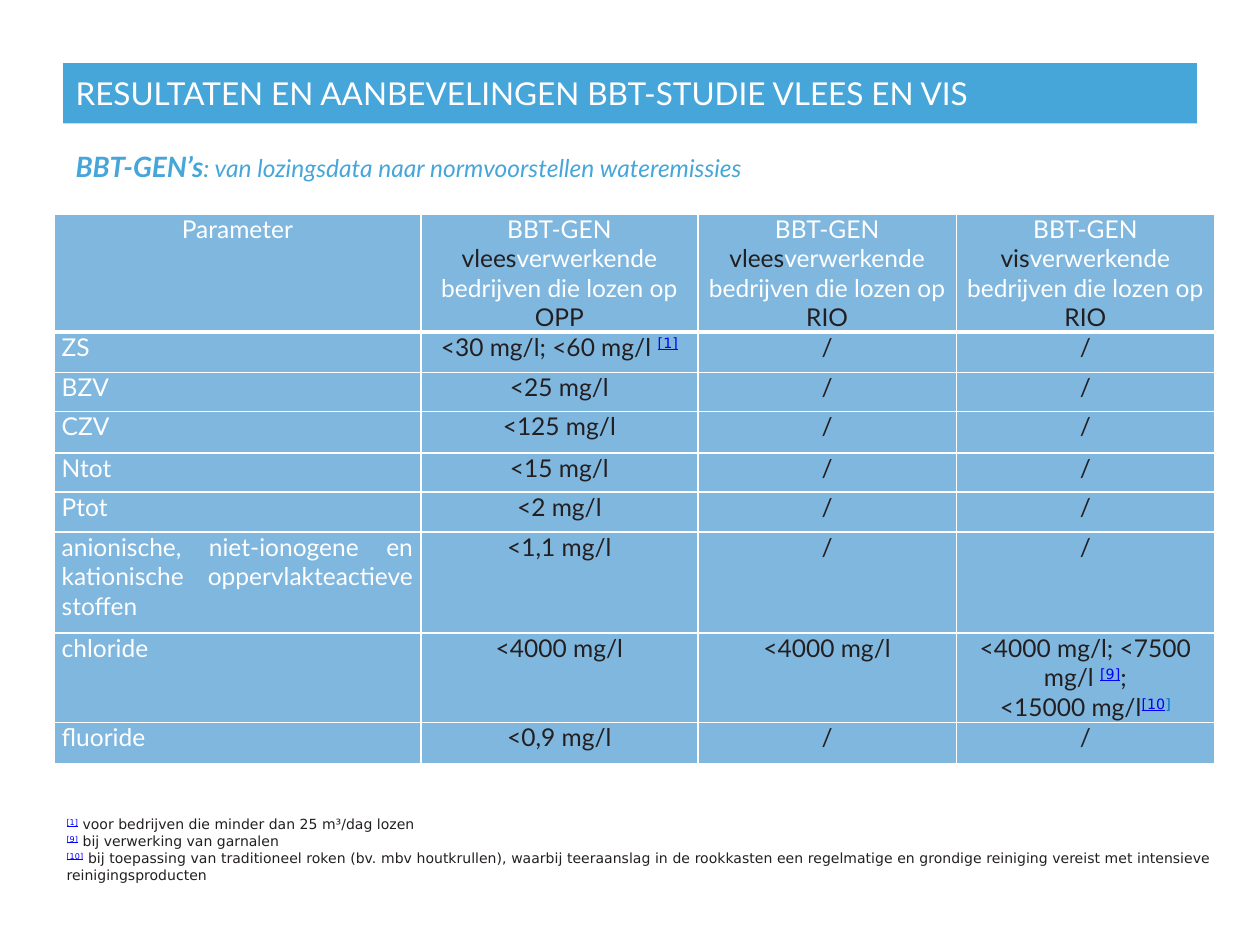
from dataclasses import dataclass
from typing import Any

from lxml.etree import SubElement
from pptx import Presentation
from pptx.dml.color import RGBColor
from pptx.enum.shapes import MSO_SHAPE
from pptx.enum.text import MSO_ANCHOR, MSO_AUTO_SIZE, PP_ALIGN
from pptx.oxml import parse_xml
from pptx.oxml.ns import nsdecls, qn
from pptx.util import Emu, Inches, Pt

WHITE, INK, BLUE, LINK, CELL = "FFFFFF", "231F20", "47A6D9", "0000FF", "0070C0"
LATO, DEJAVU = "Lato", "DejaVu Sans"
LEFT, CENTER, JUSTIFY = PP_ALIGN.LEFT, PP_ALIGN.CENTER, PP_ALIGN.JUSTIFY


@dataclass(frozen=True)
class Box:
    left: float
    top: float
    width: float
    height: float


@dataclass(frozen=True)
class Run:
    text: str
    color: str = INK
    size: float = 14
    name: str = LATO
    bold: bool = False
    italic: bool = False
    underline: bool = False
    raised: bool = False


TITLE_BOX = Box(5, 6.67, 90, 6.4)
SUBTITLE_BOX = Box(5, 15.2, 90, 10.4)
TABLE_BOX = Box(4.3, 22.67, 92.1, 58.13)
NOTES_BOX = Box(4.3, 85.6, 92.9, 8.53)
COLUMN_WIDTHS = (2.91, 2.2, 2.05, 2.05)
ROW_HEIGHTS = (0.93, 0.32, 0.31, 0.33, 0.31, 0.32, 0.8, 0.71, 0.33)


def color(value: str) -> RGBColor:
    return RGBColor.from_string(value)


def reference(text: str, size: float = 14) -> Run:
    return Run(text, LINK, size, DEJAVU, underline=True, raised=True)


def place(shape: Any, box: Box, presentation: Any) -> None:
    width, height = presentation.slide_width, presentation.slide_height
    positions = {
        "left": box.left * width,
        "top": box.top * height,
        "width": box.width * width,
        "height": box.height * height,
    }
    for attribute, value in positions.items():
        setattr(shape, attribute, Emu(round(value / 100)))


def write(frame: Any, paragraphs: list[list[Run]], alignment: Any) -> None:
    for index, runs in enumerate(paragraphs):
        paragraph = frame.add_paragraph() if index else frame.paragraphs[0]
        paragraph.alignment = alignment
        paragraph.space_before = Pt(0)
        for item in runs:
            run = paragraph.add_run()
            run.text = item.text
            formats = {
                "size": Pt(item.size),
                "name": item.name,
                "bold": item.bold,
                "italic": item.italic,
                "underline": item.underline,
            }
            for attribute, value in formats.items():
                setattr(run.font, attribute, value)
            run.font.color.rgb = color(item.color)
            if item.raised:
                run._r.get_or_add_rPr().set("baseline", "30000")


def paint(shape: Any, fill: str) -> None:
    shape.fill.solid()
    shape.fill.fore_color.rgb = color(fill)


def format_frame(frame: Any, anchor: Any) -> None:
    formats = {
        "word_wrap": True,
        "auto_size": MSO_AUTO_SIZE.NONE,
        "vertical_anchor": anchor,
    }
    for attribute, value in formats.items():
        setattr(frame, attribute, value)


def style_cell(cell: Any, bottom_width: float) -> None:
    formats = {
        "margin_left": Inches(0.06),
        "margin_right": Inches(0.06),
        "margin_top": 0,
        "margin_bottom": 0,
        "vertical_anchor": MSO_ANCHOR.TOP,
    }
    for attribute, value in formats.items():
        setattr(cell, attribute, value)
    paint(cell, CELL)
    properties = cell._tc.get_or_add_tcPr()
    fill = properties.find(".//" + qn("a:srgbClr"))
    SubElement(fill, qn("a:alpha")).set("val", "50000")
    widths = {"lnL": 1, "lnR": 1, "lnT": 1, "lnB": bottom_width}
    for index, (tag, width) in enumerate(widths.items()):
        border = parse_xml(
            f'<a:{tag} {nsdecls("a")} w="{Pt(width)}"><a:solidFill>'
            f'<a:srgbClr val="{WHITE}"/></a:solidFill></a:{tag}>'
        )
        properties.insert(index, border)


def header(subject: str, target: str) -> list[list[Run]]:
    description = Run("verwerkende bedrijven die lozen op ", WHITE)
    return [[Run("BBT-GEN", WHITE)], [Run(subject), description, Run(target)]]


def limits(name: str, *values: Any) -> list[list[list[Run]]]:
    cells = [[[Run(value)]] if isinstance(value, str) else value for value in values]
    return [[[Run(name, WHITE)]], *cells]


def add_limits_table(slide: Any, presentation: Any, rows: list) -> None:
    shape = slide.shapes.add_table(
        len(ROW_HEIGHTS), len(COLUMN_WIDTHS), 0, 0, Inches(1), Inches(1)
    )
    place(shape, TABLE_BOX, presentation)
    table = shape.table
    table.first_row = table.horz_banding = False
    for column, width in zip(table.columns, COLUMN_WIDTHS):
        column.width = Inches(width)
    for row, height in zip(table.rows, ROW_HEIGHTS):
        row.height = Inches(height)
    for row_index, row in enumerate(rows):
        for column_index, paragraphs in enumerate(row):
            cell = table.cell(row_index, column_index)
            style_cell(cell, 1 if row_index else 3)
            is_name = row_index > 0 and column_index == 0
            write(cell.text_frame, paragraphs, JUSTIFY if is_name else CENTER)


def main() -> None:
    presentation = Presentation()
    presentation.slide_width, presentation.slide_height = Inches(10), Inches(7.5)
    slide = presentation.slides.add_slide(presentation.slide_layouts[1])

    title = slide.shapes.title
    place(title, TITLE_BOX, presentation)
    paint(title, BLUE)
    format_frame(title.text_frame, MSO_ANCHOR.MIDDLE)
    heading = Run("RESULTATEN EN AANBEVELINGEN BBT-STUDIE VLEES EN VIS", WHITE, 18)
    write(title.text_frame, [[heading]], LEFT)

    subtitle = slide.placeholders[1]
    place(subtitle, SUBTITLE_BOX, presentation)
    format_frame(subtitle.text_frame, MSO_ANCHOR.TOP)
    properties = subtitle.text_frame.paragraphs[0]._p.get_or_add_pPr()
    for attribute in ("marL", "indent"):
        properties.set(attribute, "0")
    SubElement(properties, qn("a:buNone"))
    explanation = ": van lozingsdata naar normvoorstellen wateremissies"
    write(subtitle.text_frame, [[
        Run("BBT-GEN’s", BLUE, 16, bold=True, italic=True),
        Run(explanation, BLUE, italic=True),
    ]], LEFT)

    fish_chloride = [
        [Run("<4000 mg/l; <7500 mg/l "), reference("[9]"), Run(";")],
        [Run("<15000 mg/l"), reference("[10"), Run("]", CELL, name=DEJAVU, raised=True)],
    ]
    surfactants = "anionische, niet-ionogene en kationische oppervlakteactieve stoffen"
    add_limits_table(slide, presentation, [
        limits("Parameter", header("vlees", "OPP"), header("vlees", "RIO"), header("vis", "RIO")),
        limits("ZS", [[Run("<30 mg/l; <60 mg/l "), reference("[1]")]], "/", "/"),
        limits("BZV", "<25 mg/l", "/", "/"),
        limits("CZV", "<125 mg/l", "/", "/"),
        limits("Ntot", "<15 mg/l", "/", "/"),
        limits("Ptot", "<2 mg/l", "/", "/"),
        limits(surfactants, "<1,1 mg/l", "/", "/"),
        limits("chloride", "<4000 mg/l", "<4000 mg/l", fish_chloride),
        limits("fluoride", "<0,9 mg/l", "/", "/"),
    ])

    notes = slide.shapes.add_shape(MSO_SHAPE.RECTANGLE, 0, 0, Inches(1), Inches(1))
    place(notes, NOTES_BOX, presentation)
    notes.shadow.inherit = False
    paint(notes, WHITE)
    notes.line.fill.background()
    format_frame(notes.text_frame, MSO_ANCHOR.MIDDLE)
    footnotes = {
        "[1]": " voor bedrijven die minder dan 25 m³/dag lozen",
        "[9]": " bij verwerking van garnalen",
        "[10]": " bij toepassing van traditioneel roken (bv. mbv houtkrullen), waarbij teeraanslag "
        "in de rookkasten een regelmatige en grondige reiniging vereist met intensieve "
        "reinigingsproducten",
    }
    write(notes.text_frame, [
        [reference(mark, 8), Run(text, size=8, name=DEJAVU)] for mark, text in footnotes.items()
    ], JUSTIFY)
    presentation.save("out.pptx")


if __name__ == "__main__":
    main()
